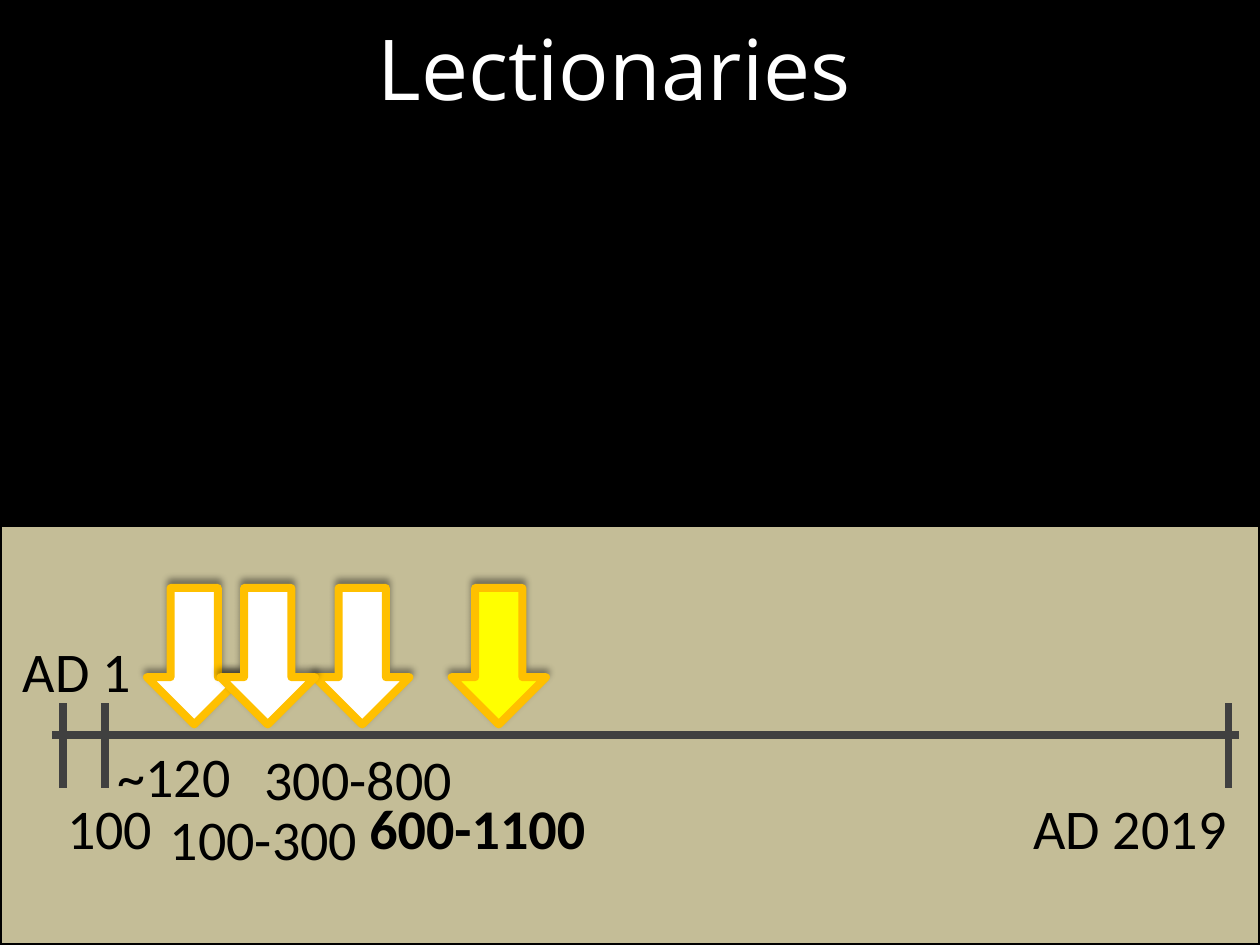
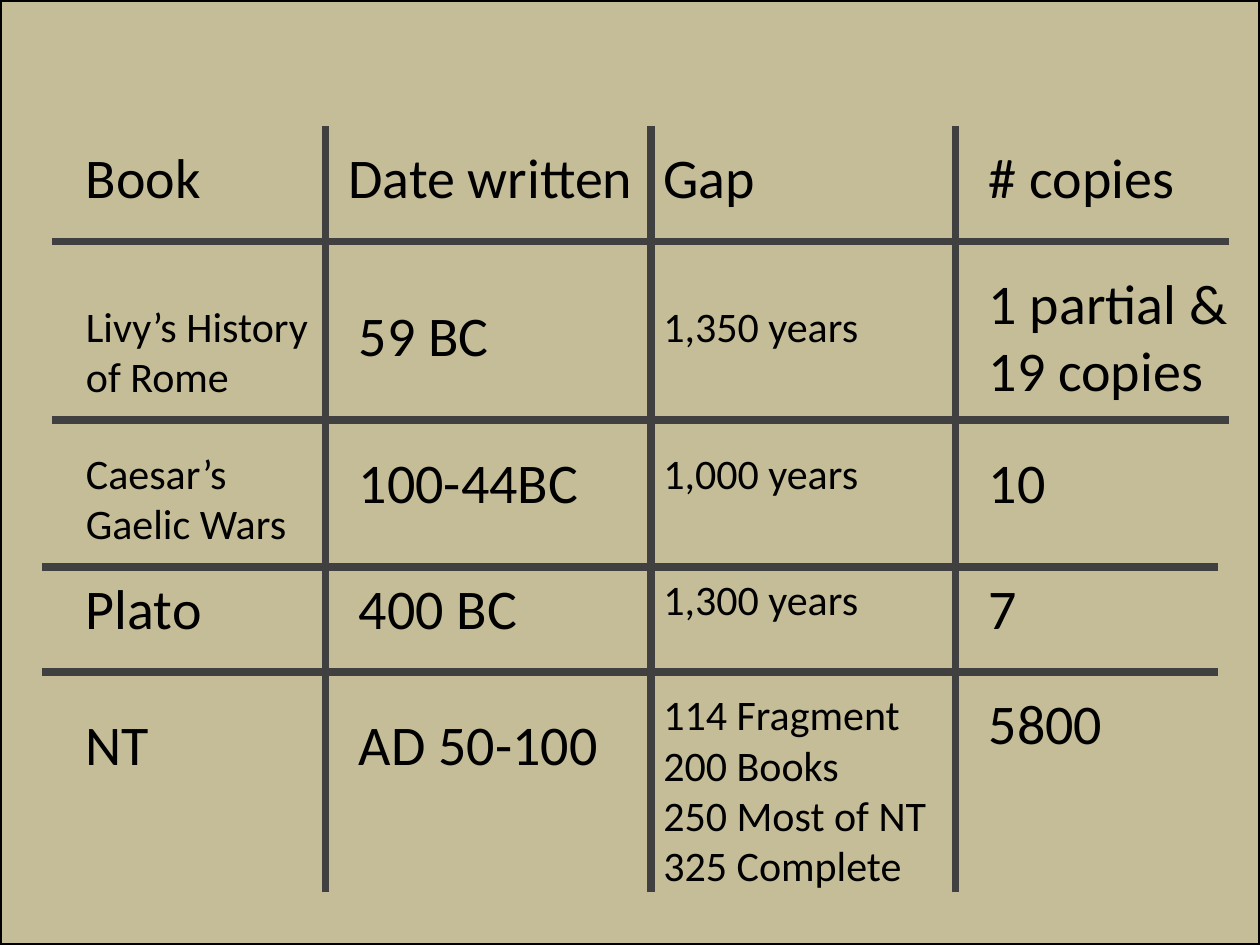
from lxml import etree
from pptx import Presentation, util as u
from pptx.dml.color import RGBColor
from pptx.enum import shapes, text
from pptx.oxml.ns import qn

COLORS = {"black": "000000", "white": "FFFFFF", "sand": "C4BD97",
          "rule": "404040", "gold": "FFC000", "yellow": "FFFF00"}
BODY, TITLE = "Calibri", "Open Sans"
LINE_HEIGHT = {BODY: 1.22, TITLE: 1.36}

# All lengths are in grid units, twelve to the inch
GRID = 12
WIDE, HIGH = 10 * GRID, 7.5 * GRID

# Timeline: axis, ticks, arrows (left, fill) and labels (text, left, top, width, format)
AXIS_Y = 70
TICKS = [6, 10, 117]
ARROWS = [(14, "white"), (30, "white"), (21, "white"), (43, "yellow")]
LABELS = [
    (" 100", 4, 75, 24, {}),
    ("AD 2019", 94, 75, 24, {"align": "RIGHT"}),
    ("AD 1", 1, 60, 24, {}),
    ("~120", 10, 70, 31, {}),
    ("300-800", 24, 70.3, 31, {}),
    ("100-300", 15, 76, 31, {}),
    ("600-1100", 34, 75, 31, {"bold": True}),
]

# Manuscript grid: column (left, width), row tops, and cells as (text, size, lines)
COLUMNS = [(7, 24), (33, 31), (62, 31), (93, 31)]
ROW_TOPS = [13, 28, 42, 54, 67]
ROWS = [
    [("Book", 32, 1), ("Date written", 32, 1), ("Gap", 32, 1), ("# copies", 32, 1)],
    [("Livy’s History of Rome", 24, 2), ("59 BC", 32, 1), ("1,350 years", 24, 1),
     ("1 partial & 19 copies", 32, 2)],
    [("Caesar’s Gaelic Wars", 24, 2), ("100-44BC", 32, 1), ("1,000 years", 24, 1),
     ("10", 32, 1)],
    [("Plato", 32, 1), ("400 BC", 32, 1), ("1,300 years", 24, 1), ("7", 32, 1)],
    [("NT", 32, 1), ("AD 50-100", 32, 1),
     ("114 Fragment\n200 Books\n250 Most of NT\n325 Complete", 24, 4), ("5800", 32, 1)],
]
NUDGES = {(0, 1): (-1, 0), (1, 3): (0, -3), (4, 2): (0, -2), (4, 3): (0, -2)}
COLUMN_RULES = [31, 62, 91]
ROW_RULES = [(5, 23), (5, 40), (4, 54), (4, 64)]
RULE_TOP, RULE_BOTTOM, RULE_WIDTH = 12, 85, 112


def color(name):
    return RGBColor.from_string(COLORS[name])


def units(*values):
    return [u.Inches(value / GRID) for value in values]


def add_page(deck):
    page = deck.slides.add_slide(deck.slide_layouts[6])
    page.background.fill.solid()
    page.background.fill.fore_color.rgb = color("black")
    return page


def add_text(page, words, left, top, width, size=32, lines=1, font=BODY,
             ink="black", align="LEFT", bold=False):
    height = (lines * size * LINE_HEIGHT[font] / 72 + 0.1) * GRID
    box = page.shapes.add_textbox(*units(left, top, width, height))
    frame = box.text_frame
    frame.word_wrap = True
    frame.auto_size = text.MSO_AUTO_SIZE.SHAPE_TO_FIT_TEXT
    frame.text = words
    for para in frame.paragraphs:
        para.alignment = text.PP_ALIGN[align]
        for span in para.runs:
            span.font.size, span.font.name = u.Pt(size), font
            span.font.bold = bold
            span.font.color.rgb = color(ink)


def add_block(page, kind, left, top, width, height, fill, line, weight):
    block = page.shapes.add_shape(shapes.MSO_SHAPE[kind], *units(left, top, width, height))
    block.shadow.inherit = False
    block.fill.solid()
    block.fill.fore_color.rgb = color(fill)
    block.line.color.rgb = color(line)
    block.line.width = u.Pt(weight)
    return block


def add_panel(page, top):
    add_block(page, "RECTANGLE", 0, top, WIDE, HIGH - top, "sand", "black", 2)


def add_rule(page, x1, y1, x2, y2):
    rule = page.shapes.add_connector(shapes.MSO_CONNECTOR.STRAIGHT, *units(x1, y1, x2, y2))
    rule.line.color.rgb = color("rule")
    rule.line.width = u.Pt(4.5)
    etree.SubElement(rule._element.spPr, qn("a:effectLst"))


def add_arrow(page, left, fill):
    arrow = add_block(page, "DOWN_ARROW", left, 56, 9, 13, fill, "gold", 4.5)
    # Soft shadow cast upwards
    effects = arrow._element.spPr.find(qn("a:effectLst"))
    shadow = etree.SubElement(effects, qn("a:outerShdw"), blurRad=str(u.Pt(4)),
                              dist=str(u.Pt(3)), dir=str(270 * 60000), rotWithShape="0")
    tint = etree.SubElement(shadow, qn("a:srgbClr"), val=COLORS["black"])
    etree.SubElement(tint, qn("a:alpha"), val="40000")


def build_timeline(deck):
    page = add_page(deck)
    add_text(page, "Lectionaries", 2, 1, 113, size=48, font=TITLE, ink="white", align="CENTER")
    add_panel(page, 50)
    add_rule(page, 5, AXIS_Y, 118, AXIS_Y)
    for x in TICKS:
        add_rule(page, x, AXIS_Y + 5, x, AXIS_Y - 3)
    for left, fill in ARROWS:
        add_arrow(page, left, fill)
    for words, left, top, width, style in LABELS:
        add_text(page, words, left, top, width, **style)


def build_manuscripts(deck):
    page = add_page(deck)
    add_panel(page, 0)
    for r, (top, cells) in enumerate(zip(ROW_TOPS, ROWS)):
        for c, ((left, width), (words, size, lines)) in enumerate(zip(COLUMNS, cells)):
            dx, dy = NUDGES.get((r, c), (0, 0))
            add_text(page, words, left + dx, top + dy, width, size=size, lines=lines)
    for x in COLUMN_RULES:
        add_rule(page, x, RULE_BOTTOM, x, RULE_TOP)
    for x, y in ROW_RULES:
        add_rule(page, x, y, x + RULE_WIDTH, y)


def main():
    deck = Presentation()
    deck.slide_width, deck.slide_height = units(WIDE, HIGH)
    build_timeline(deck)
    build_manuscripts(deck)
    deck.save("out.pptx")


if __name__ == "__main__":
    main()
